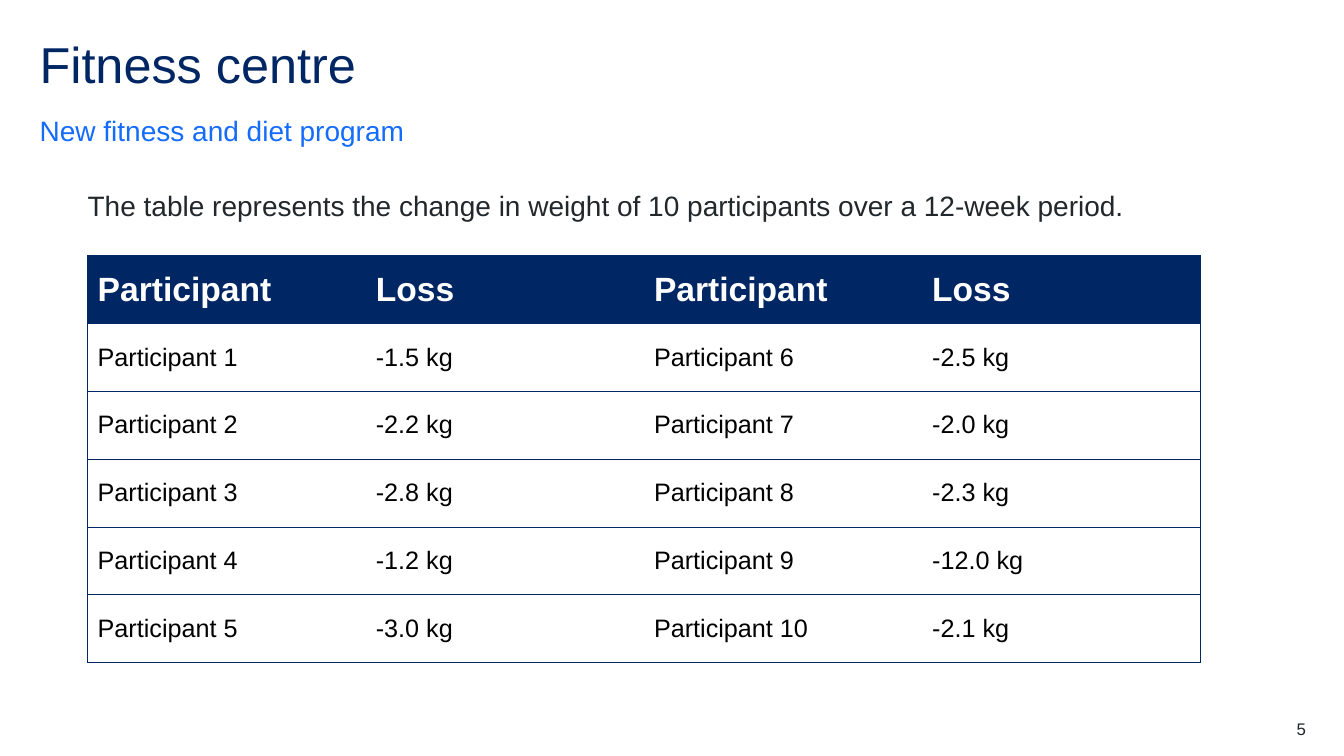
from lxml.etree import SubElement
from pptx import Presentation
from pptx.dml.color import RGBColor
from pptx.enum.text import MSO_ANCHOR as Anchor, MSO_AUTO_SIZE as AutoSize, PP_ALIGN as Align
from pptx.oxml.ns import qn
from pptx.util import Pt

COLORS = {"navy": "002664", "blue": "146CFD", "text": "22272B", "black": "000000", "white": "FFFFFF"}
PLAIN_TABLE_STYLE = "{2D5ABB26-0587-4C30-8999-92F81FD0307C}"
LOSSES = ["-1.5", "-2.2", "-2.8", "-1.2", "-3.0", "-2.5", "-2.0", "-2.3", "-12.0", "-2.1"]


def format_paragraph(paragraph, size, color, bold=False, **formats):
    for name, value in formats.items():
        setattr(paragraph, name, value)
    font_values = {"name": "Arial", "size": Pt(size), "bold": bold}
    for name, value in font_values.items():
        setattr(paragraph.font, name, value)
    paragraph.font.color.rgb = RGBColor.from_string(COLORS[color])


def place_text(shape, box, text, size, color, anchor=Anchor.TOP, **formats):
    for name, value in zip(("left", "top", "width", "height"), box):
        setattr(shape, name, Pt(value))
    frame = shape.text_frame
    frame.text = text
    frame_values = {"margin_left": 0, "margin_right": 0, "margin_top": 0, "margin_bottom": 0,
                    "word_wrap": True, "auto_size": AutoSize.NONE, "vertical_anchor": anchor}
    for name, value in frame_values.items():
        setattr(frame, name, value)
    format_paragraph(frame.paragraphs[0], size, color, **formats)


def add_border(cell, side):
    line = SubElement(cell._tc.get_or_add_tcPr(), qn(f"a:ln{side}"), w=str(Pt(0.5)))
    fill = SubElement(line, qn("a:solidFill"))
    SubElement(fill, qn("a:srgbClr"), val=COLORS["navy"])


def add_loss_table(slide, box):
    half = len(LOSSES) // 2
    entries = [(f"Participant {number}", f"{loss} kg") for number, loss in enumerate(LOSSES, 1)]
    rows = [("Participant", "Loss") * 2]
    rows += [left + right for left, right in zip(entries[:half], entries[half:])]
    last_column = len(rows[0]) - 1
    table = slide.shapes.add_table(len(rows), len(rows[0]), *map(Pt, box)).table
    table._tbl.tblPr.find(qn("a:tableStyleId")).text = PLAIN_TABLE_STYLE
    table.horz_banding = False
    for column in table.columns:
        column.width = Pt(box[2] / len(rows[0]))
    for row_index, row in enumerate(rows):
        table.rows[row_index].height = Pt(box[3] / len(rows))
        is_header = row_index == 0
        size, color, background = (24, "white", "navy") if is_header else (18, "black", "white")
        for column_index, text in enumerate(row):
            cell = table.cell(row_index, column_index)
            cell.text = text
            cell.vertical_anchor = Anchor.MIDDLE
            format_paragraph(cell.text_frame.paragraphs[0], size, color, bold=is_header)
            outer_sides = "L" * (column_index == 0) + "R" * (column_index == last_column)
            for side in outer_sides + "TB":
                add_border(cell, side)
            cell.fill.solid()
            cell.fill.fore_color.rgb = RGBColor.from_string(COLORS[background])


def add_heading(slide, box):
    left, top, width, height = box
    place_text(slide.shapes.title, (left, top, width, 43), "Fitness centre", 36, "navy",
               alignment=Align.LEFT, line_spacing=0.9)
    place_text(slide.placeholders[1], (left, top + height - 28, width, 28),
               "New fitness and diet program", 20, "blue", Anchor.BOTTOM,
               line_spacing=1.5, space_before=Pt(0), space_after=Pt(12))


def add_content(slide, box):
    left, top, width, height = box
    place_text(slide.placeholders[3], box,
               "The table represents the change in weight of 10 participants over a 12-week period.",
               20, "text", line_spacing=1.5, space_before=Pt(0), space_after=Pt(12))
    add_loss_table(slide, (left, top + 59.5, 794.8, 291))


def add_page_number(slide, box):
    place_text(slide.shapes.add_textbox(0, 0, 0, 0), box, "5", 12, "text", alignment=Align.RIGHT)


def main():
    presentation = Presentation()
    presentation.slide_width, presentation.slide_height = Pt(960), Pt(540)
    slide = presentation.slides.add_slide(presentation.slide_layouts.get_by_name("Comparison"))
    for index in (2, 4):
        placeholder = slide.placeholders[index].element
        placeholder.getparent().remove(placeholder)
    add_heading(slide, (28.3, 28.3, 904.5, 77))
    add_content(slide, (62.6, 123, 870.2, 379))
    add_page_number(slide, (876, 513.5, 56.8, 14.5))
    presentation.save("out.pptx")


if __name__ == "__main__":
    main()
